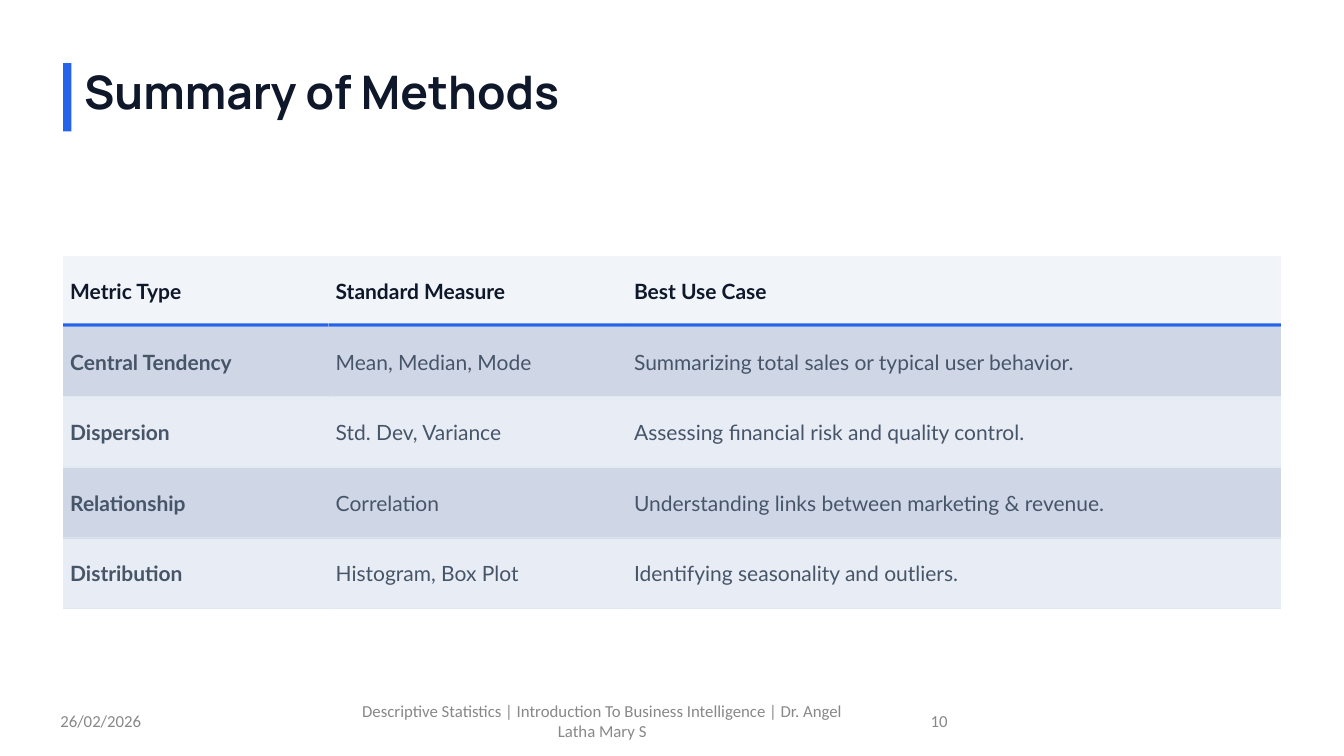
from itertools import accumulate

from lxml import etree
from pptx import Presentation
from pptx.dml.color import RGBColor
from pptx.enum import shapes, text
from pptx.oxml import ns
from pptx.util import Cm, Pt

COLOURS = {
    "accent": "2563EB", "ink": "0F172A", "body": "475569", "footer": "888888",
    "header": "F1F5F9", "odd": "CFD7E7", "even": "E8ECF4", "rule": "E2E8F0",
}
COLUMN_WIDTHS = (6.69, 7.52, 16.48)
ROW_HEIGHT = 1.78
METHODS = (
    ("Metric Type", "Standard Measure", "Best Use Case"),
    ("Central Tendency", "Mean, Median, Mode", "Summarizing total sales or typical user behavior."),
    ("Dispersion", "Std. Dev, Variance", "Assessing financial risk and quality control."),
    ("Relationship", "Correlation", "Understanding links between marketing & revenue."),
    ("Distribution", "Histogram, Box Plot", "Identifying seasonality and outliers."),
)


def colour(name):
    """Return the named colour."""
    return RGBColor.from_string(COLOURS[name])


def write(frame, words, *, font, size, fill, bold=False, align=text.PP_ALIGN.LEFT):
    """Put one formatted paragraph into a text frame."""
    para = frame.paragraphs[0]
    para.alignment = align
    span = para.add_run()
    span.text = words
    span.font.name = font
    span.font.size = Pt(size)
    span.font.bold = bold
    span.font.color.rgb = colour(fill)


def add_bar(page, left, top, width, height, fill):
    """Draw a plain filled bar."""
    bar = page.shapes.add_shape(
        shapes.MSO_SHAPE.RECTANGLE, Cm(left), Cm(top), Cm(width), Cm(height))
    bar.shadow.inherit = False
    bar.fill.solid()
    bar.fill.fore_color.rgb = colour(fill)
    bar.line.fill.background()


def add_heading(page, left, top, width, height):
    """Place the title beside its accent bar."""
    indent = 0.53
    title = page.shapes.title
    title.left, title.top = Cm(left + indent), Cm(top)
    title.width, title.height = Cm(width - indent), Cm(height)
    frame = title.text_frame
    frame.margin_left = frame.margin_right = frame.margin_top = frame.margin_bottom = 0
    frame.vertical_anchor = text.MSO_ANCHOR.TOP
    frame.word_wrap = True
    frame.auto_size = text.MSO_AUTO_SIZE.SHAPE_TO_FIT_TEXT
    write(frame, "Summary of Methods", font="Manrope", size=33, fill="ink", bold=True)
    add_bar(page, left, top, 0.21, height, "accent")


def format_cell(cell, words, row, column):
    """Fill one table cell and remove its borders."""
    cell.margin_left = cell.margin_right = Cm(0.18)
    cell.margin_top = cell.margin_bottom = Cm(0.08)
    cell.vertical_anchor = text.MSO_ANCHOR.MIDDLE
    properties = cell._tc.get_or_add_tcPr()
    for side in ("lnL", "lnR", "lnT", "lnB"):
        border = etree.SubElement(properties, ns.qn(f"a:{side}"), w="0")
        etree.SubElement(border, ns.qn("a:noFill"))
    cell.fill.solid()
    band = "header" if row == 0 else "odd" if row % 2 else "even"
    cell.fill.fore_color.rgb = colour(band)
    write(cell.text_frame, words, font="Lato", size=15,
          fill="body" if row else "ink", bold=row == 0 or column == 0)


def add_methods_table(page, left, top):
    """Build the methods table with a rule under every row."""
    table = page.shapes.add_table(
        len(METHODS), len(COLUMN_WIDTHS), Cm(left), Cm(top),
        Cm(sum(COLUMN_WIDTHS)), Cm(ROW_HEIGHT * len(METHODS))).table
    for column, width in enumerate(COLUMN_WIDTHS):
        table.columns[column].width = Cm(width)
    starts = list(accumulate(COLUMN_WIDTHS, initial=left))
    for row, values in enumerate(METHODS):
        table.rows[row].height = Cm(ROW_HEIGHT)
        thickness, fill = (0.03, "rule") if row else (0.08, "accent")
        bottom = top + ROW_HEIGHT * (row + 1)
        for column, words in enumerate(values):
            format_cell(table.cell(row, column), words, row, column)
            add_bar(page, starts[column], bottom - thickness,
                    COLUMN_WIDTHS[column], thickness, fill)


def add_footer(page, top, height):
    """Place the date, course name and page number."""
    course = "Descriptive Statistics | Introduction To Business Intelligence | Dr. Angel Latha Mary S"
    parts = (
        (1.27, 5.92, "26/02/2026", text.PP_ALIGN.LEFT),
        (8.69, 12.98, course, text.PP_ALIGN.CENTER),
        (18.21, 5.92, "10", text.PP_ALIGN.RIGHT),
    )
    for left, width, words, align in parts:
        box = page.shapes.add_textbox(Cm(left), Cm(top), Cm(width), Cm(height))
        box.text_frame.word_wrap = True
        box.text_frame.vertical_anchor = text.MSO_ANCHOR.MIDDLE
        write(box.text_frame, words, font="Calibri", size=12, fill="footer", align=align)


def main():
    """Build and save the deck."""
    deck = Presentation()
    deck.slide_width, deck.slide_height = Cm(33.87), Cm(19.05)
    page = deck.slides.add_slide(deck.slide_layouts.get_by_name("Title Only"))
    add_methods_table(page, 1.59, 6.45)
    add_heading(page, 1.59, 1.59, 32.2, 1.72)
    add_footer(page, 17.66, 1.01)
    deck.save("out.pptx")


if __name__ == "__main__":
    main()
